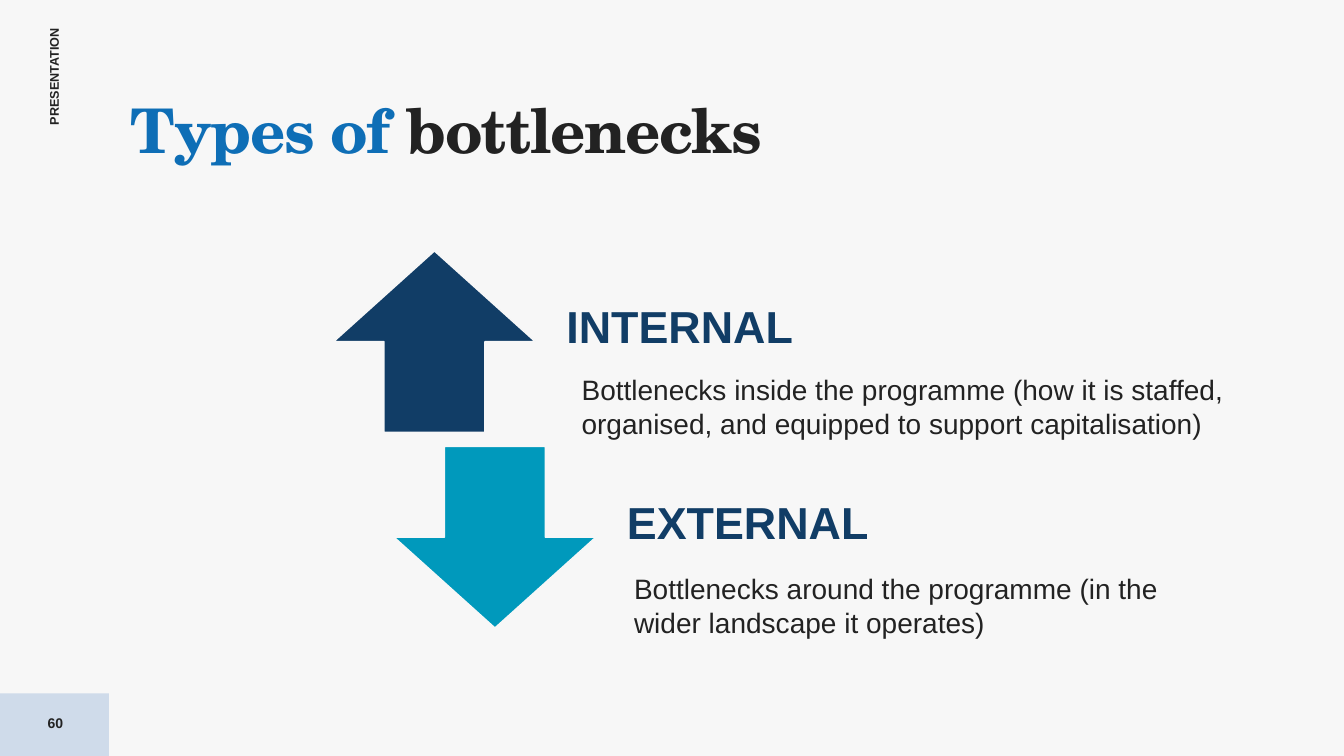
"""Build the slide on internal and external types of bottlenecks."""
from dataclasses import dataclass

from pptx import Presentation
from pptx.dml.color import RGBColor
from pptx.enum.shapes import MSO_SHAPE
from pptx.enum.text import MSO_ANCHOR, MSO_AUTO_SIZE, PP_ALIGN
from pptx.util import Inches, Pt

RECT, UP, DOWN = MSO_SHAPE.RECTANGLE, MSO_SHAPE.UP_ARROW, MSO_SHAPE.DOWN_ARROW
TOP, MID = MSO_ANCHOR.TOP, MSO_ANCHOR.MIDDLE
LEFT, MIDST = PP_ALIGN.LEFT, PP_ALIGN.CENTER
FIXED = MSO_AUTO_SIZE.NONE


@dataclass(frozen=True)
class Theme:
    back: str = "F7F7F7"
    pale: str = "CFDBEA"
    ink: str = "222222"
    blue: str = "0E6EB6"
    navy: str = "113D66"
    teal: str = "0099BC"
    sans: str = "Arial"
    serif: str = "TeX Gyre Schola"
    title: int = 44
    head: int = 32
    body: int = 20
    page: int = 10
    side: int = 9


look = Theme()
deck = Presentation()
deck.slide_width, deck.slide_height = Inches(13.33), Inches(7.5)
COL, ROW = deck.slide_width / 40, deck.slide_height / 30
slide = deck.slides.add_slide(deck.slide_layouts[5])
slide.background.fill.solid()
slide.background.fill.fore_color.rgb = RGBColor.from_string(look.back)


def grid(left, top, wide, tall):
    return [round(n) for n in (left * COL, top * ROW, wide * COL, tall * ROW)]


def write(text, box, size, tint=look.ink, face=look.sans, bold=True, align=LEFT,
          anchor=TOP, pad=(0, 0, 0, 0), lead=1.0, wrap=True, track=0):
    """Put text, or pairs of text and colour, into a box with the given format."""
    frame = box.text_frame
    frame.auto_size, frame.word_wrap = FIXED, wrap
    frame.vertical_anchor = anchor
    (frame.margin_left, frame.margin_top,
     frame.margin_right, frame.margin_bottom) = grid(*pad)
    line = frame.paragraphs[0]
    line.alignment, line.line_spacing = align, lead
    for words, shade in [(text, tint)] if isinstance(text, str) else text:
        run = line.add_run()
        run.text = words
        run.font.name, run.font.size, run.font.bold = face, Pt(size), bold
        run.font.color.rgb = RGBColor.from_string(shade)
        if track:
            run.font._element.set("spc", str(track))


title = slide.shapes.title
title.left, title.top, title.width, title.height = grid(3.87, 3.96, 30.63, 3.52)
write([("Types of ", look.blue), ("bottlenecks", look.ink)], title, look.title,
      face=look.serif, lead=0.9, track=-100)

block = slide.shapes.add_shape(RECT, *grid(0, 27.52, 3.24, 2.48))
block.shadow.inherit = False
block.fill.solid()
block.fill.fore_color.rgb = RGBColor.from_string(look.pale)
block.line.fill.background()

side = slide.shapes.add_textbox(*grid(0.12, 2.68, 2.97, 0.6))
side.rotation = 270
write("PRESENTATION", side, look.side, wrap=False)
page = slide.shapes.add_textbox(*grid(0, 27.88, 3.3, 1.6))
write("60", page, look.page, align=MIDST, anchor=MID)

WIDE, TALL, STEP = 6, 7.2, 6.18
kinds = [
    (UP, look.navy, 9.93, 9.96, "INTERNAL", (17.01, 14.6, 20.01, 3.08),
     "Bottlenecks inside the programme (how it is staffed, organised, "
     "and equipped to support capitalisation)"),
    (DOWN, look.teal, 11.73, 17.72, "EXTERNAL", (18.57, 22.48, 17.73, 3.08),
     "Bottlenecks around the programme (in the wider landscape it operates)"),
]
for form, tint, left, top, name, area, words in kinds:
    arrow = slide.shapes.add_shape(form, *grid(left, top, WIDE, TALL))
    arrow.shadow.inherit = False
    arrow.fill.solid()
    arrow.fill.fore_color.rgb = RGBColor.from_string(tint)
    arrow.line.color.rgb = RGBColor.from_string(look.back)
    arrow.line.width = Pt(1)
    head = slide.shapes.add_textbox(*grid(left + STEP, top, 10.17, TALL))
    write(name, head, look.head, tint=look.navy, anchor=MID,
          pad=(0.75, 0, 0.75, 1), lead=0.9)
    note = slide.shapes.add_textbox(*grid(*area))
    write(words, note, look.body, bold=False, pad=(0.3, 0.2, 0.3, 0.2))

deck.save("out.pptx")
